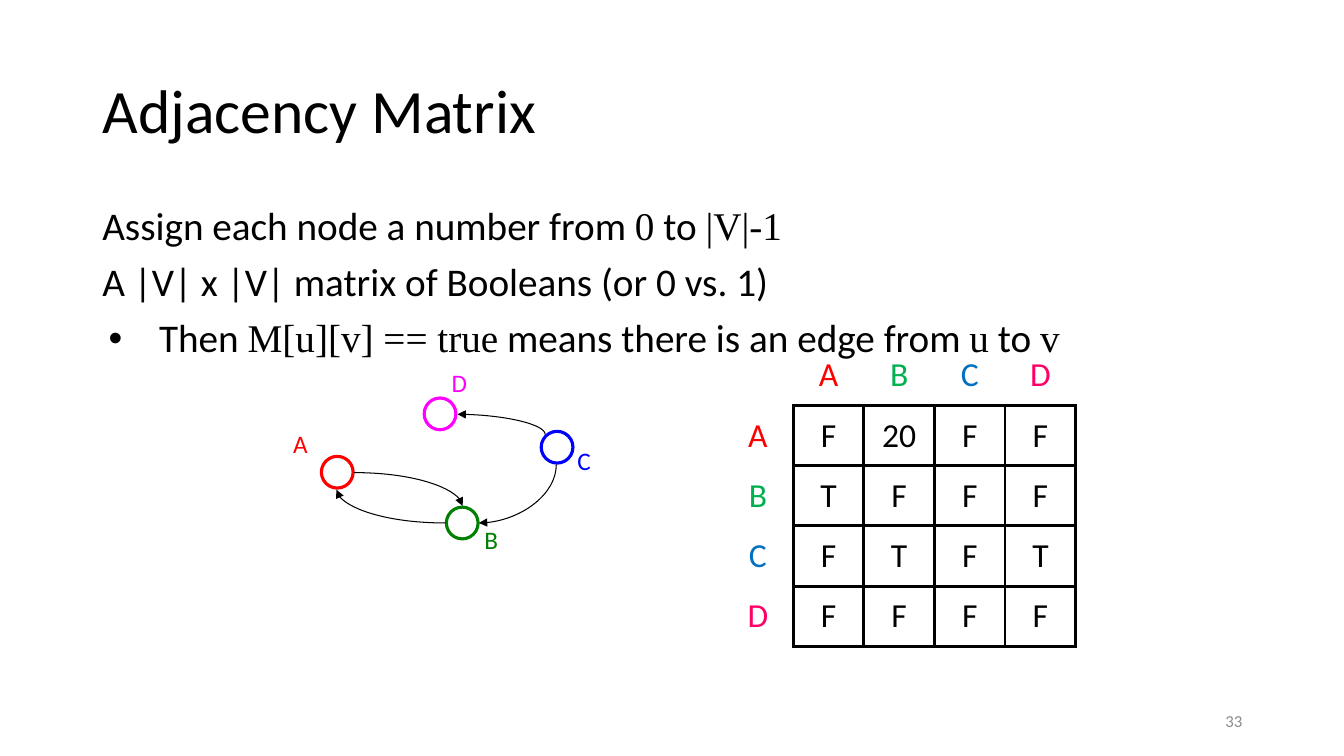
from lxml import etree
from pptx import Presentation
from pptx import util as u
from pptx.dml.color import RGBColor
from pptx.enum import shapes, text
from pptx.oxml import ns

Cm, Pt = u.Cm, u.Pt
SANS, SERIF = "Calibri", "Times New Roman"
NODE_SIZE = 0.8

COLORS = {
    "black": "000000", "white": "FFFFFF", "gray": "8C8C8C",
    "node A": "FF0000", "node B": "008000", "node C": "0000FF", "node D": "FF00FF",
    "label A": "FF0000", "label B": "00B050", "label C": "0070C0", "label D": "FF0066",
}

# name: (circle left, circle top, label left, label top)
NODES = {
    "A": (8.1, 11.5, 7.14, 10.67),
    "B": (11.25, 12.78, 11.96, 13.08),
    "C": (13.64, 10.87, 14.3, 11.1),
    "D": (10.69, 10.03, 11.13, 9.14),
}

# (horizontal end), (vertical end), which end carries the arrowhead
EDGES = [
    ((8.92, 11.91), (11.66, 12.75), "tailEnd"),
    ((11.23, 13.18), (8.48, 12.34), "tailEnd"),
    ((12.07, 13.18), (14.02, 11.71), "headEnd"),
    ((11.53, 10.44), (13.74, 10.95), "headEnd"),
]

MATRIX = ["F 20 F F", "T F F F", "F T F T", "F F F F"]

BODY = [
    [("Assign each node a number from ", SANS), ("0", SERIF), (" to ", SANS), ("|V|-1", SERIF)],
    [("A |V| x |V| matrix of Booleans (or 0 vs. 1)", SANS)],
    [("Then ", SANS), ("M[u][v] == true", SERIF), (" means there is an edge from ", SANS),
     ("u", SERIF), (" to ", SANS), ("v", SERIF)],
]


def rgb(name):
    return RGBColor.from_string(COLORS[name])


def sub(parent, tag, **attrs):
    return etree.SubElement(parent, ns.qn(tag), attrs)


def add_run(p, content, size, color="black", font=SANS):
    r = p.add_run()
    r.text = content
    r.font.name, r.font.size = font, Pt(size)
    r.font.color.rgb = rgb(color)


def add_text_box(s, left, top, width, height, wrap=True):
    tf = s.shapes.add_textbox(Cm(left), Cm(top), Cm(width), Cm(height)).text_frame
    tf.word_wrap = wrap
    return tf


def set_title(s, content):
    sp = s.shapes.title
    sp.left, sp.top, sp.width, sp.height = Cm(2.33), Cm(1.01), Cm(29.21), Cm(3.68)
    sp.text_frame.vertical_anchor = text.MSO_ANCHOR.MIDDLE
    p = sp.text_frame.paragraphs[0]
    p.alignment, p.line_spacing = text.PP_ALIGN.LEFT, 0.9
    add_run(p, content, 44)


def add_body(s):
    tf = add_text_box(s, 2.33, 5.07, 29.21, 12.09)
    for i, runs in enumerate(BODY):
        p = tf.add_paragraph() if i else tf.paragraphs[0]
        p.line_spacing, p.space_before = 0.9, Pt(10)
        for content, font in runs:
            add_run(p, content, 28, font=font)
    pPr = p._p.get_or_add_pPr()
    pPr.set("marL", str(Cm(1.43)))
    pPr.set("indent", str(Cm(-1.27)))
    sub(pPr, "a:buFont", typeface="Arial")
    sub(pPr, "a:buChar", char="•")


def add_slide_number(s, number):
    tf = add_text_box(s, 23.94, 17.65, 7.62, 1.01)
    tf.vertical_anchor = text.MSO_ANCHOR.MIDDLE
    tf.paragraphs[0].alignment = text.PP_ALIGN.RIGHT
    add_run(tf.paragraphs[0], number, 12, "gray")


def add_node(s, name, left, top, label_left, label_top):
    sp = s.shapes.add_shape(shapes.MSO_SHAPE.OVAL, Cm(left), Cm(top), Cm(NODE_SIZE), Cm(NODE_SIZE))
    sp.shadow.inherit = False
    sp.fill.solid()
    sp.fill.fore_color.rgb = rgb("white")
    sp.line.color.rgb, sp.line.width = rgb("node " + name), Pt(2.25)
    tf = add_text_box(s, label_left, label_top, 0.88, 1.02, wrap=False)
    add_run(tf.paragraphs[0], name, 18, "node " + name)


def add_edge(s, begin, end, arrow_end):
    """Quarter curve leaving begin horizontally and meeting end vertically."""
    c = s.shapes.add_connector(shapes.MSO_CONNECTOR.CURVE, *(Cm(v) for v in begin + end))
    c.line.color.rgb, c.line.width = rgb("black"), Pt(0.75)
    spPr = c._element.spPr
    spPr.find(ns.qn("a:prstGeom")).set("prst", "curvedConnector2")
    sub(c.line._get_or_add_ln(), "a:" + arrow_end, type="triangle")
    sub(spPr, "a:effectLst")


def set_borders(cell, sides):
    tcPr = cell._tc.get_or_add_tcPr()
    for side in "LRTB":
        ln = sub(tcPr, "a:ln" + side, w=str(Pt(2.25)))
        if side in sides:
            sub(sub(ln, "a:solidFill"), "a:srgbClr", val=COLORS["black"])
        else:
            sub(ln, "a:noFill")


def fill_cell(cell, content, color, sides):
    set_borders(cell, sides)
    cell.fill.background()
    cell.vertical_anchor = text.MSO_ANCHOR.MIDDLE
    cell.margin_left = cell.margin_right = cell.margin_top = cell.margin_bottom = Cm(0.25)
    p = cell.text_frame.paragraphs[0]
    p.alignment = text.PP_ALIGN.CENTER
    if content:
        add_run(p, content, 24, color)


def add_matrix(s):
    names = list(NODES)
    rows = [[""] + names] + [[n] + line.split() for n, line in zip(names, MATRIX)]
    n = len(rows)
    table = s.shapes.add_table(n, n, Cm(18.21), Cm(8.69), Cm(1.78 * n), Cm(1.52 * n)).table
    table.first_row = table.horz_banding = False
    for i, row in enumerate(rows):
        for j, content in enumerate(row):
            is_label = i == 0 or j == 0
            color = "label " + content if is_label else "black"
            if not is_label:
                sides = "LRTB"
            elif i == j:
                sides = ""
            else:
                sides = "B" if i == 0 else "R"
            fill_cell(table.cell(i, j), content, color, sides)


def main():
    prs = Presentation()
    prs.slide_width, prs.slide_height = Cm(33.87), Cm(19.05)
    s = prs.slides.add_slide(prs.slide_layouts[5])
    set_title(s, "Adjacency Matrix")
    add_body(s)
    add_slide_number(s, "33")
    for name, place in NODES.items():
        add_node(s, name, *place)
    for edge in EDGES:
        add_edge(s, *edge)
    add_matrix(s)
    prs.save("out.pptx")


if __name__ == "__main__":
    main()
